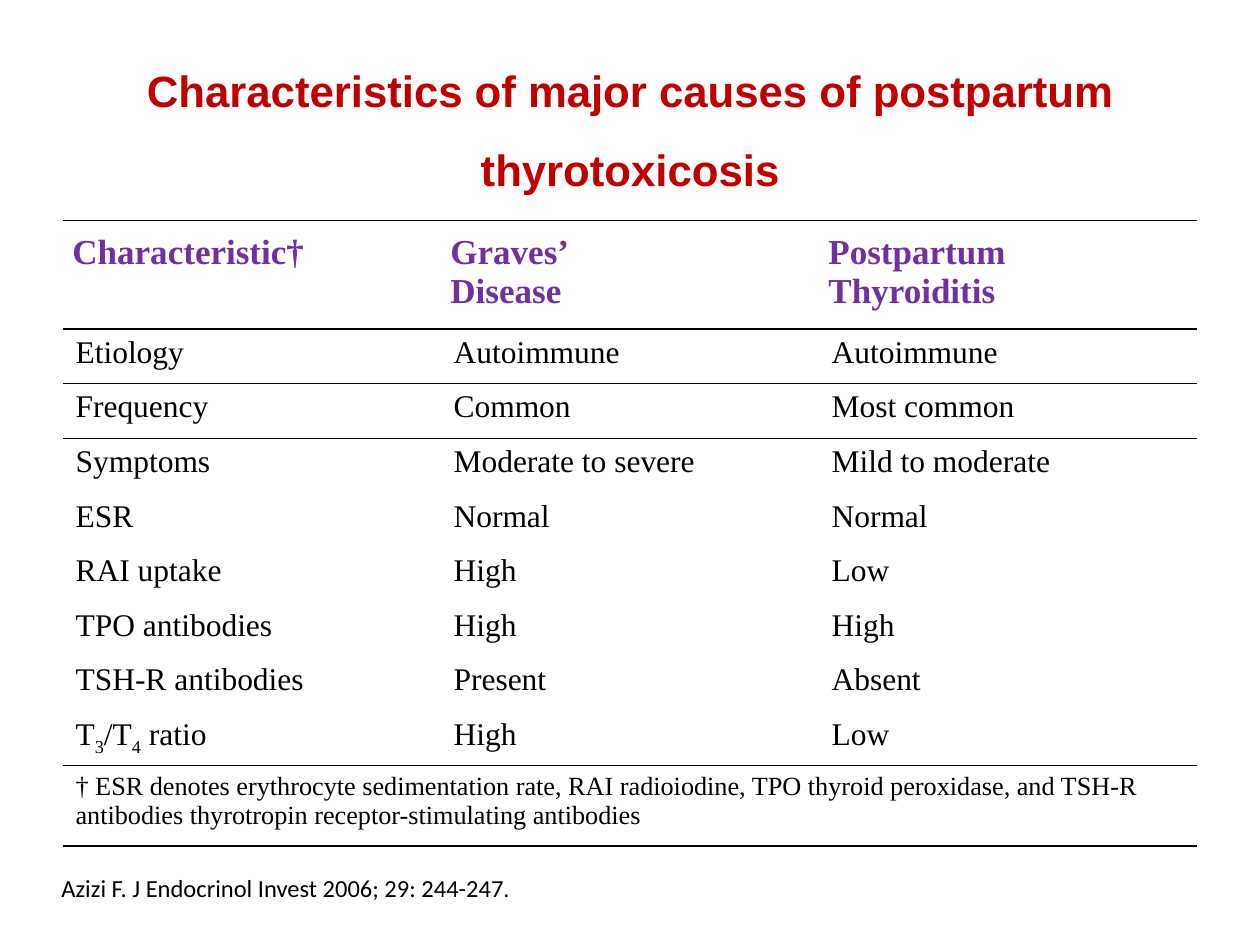
from dataclasses import dataclass

from lxml import etree
from pptx import Presentation
from pptx.dml.color import RGBColor
from pptx.enum import text
from pptx.oxml import ns
from pptx.util import Pt


@dataclass(frozen=True)
class Theme:
    title_color: str = "C00000"
    header_color: str = "7030A0"
    ink: str = "000000"
    title_font: str = "Arial"
    table_font: str = "Times New Roman"
    source_font: str = "Calibri"
    title_size: float = 25
    header_size: float = 20
    body_size: float = 18
    note_size: float = 15
    source_size: float = 14


THEME = Theme()
NO_STYLE_NO_GRID = "{2D5ABB26-0587-4C30-8999-92F81FD0307C}"
TITLE = "Characteristics of major causes of postpartum thyrotoxicosis"
HEADER = ["Characteristic†", "Graves’\nDisease", "Postpartum\nThyroiditis"]
# Text between tildes is set as subscript.
BODY = [
    ["Etiology", "Autoimmune", "Autoimmune"],
    ["Frequency", "Common", "Most common"],
    ["Symptoms", "Moderate to severe", "Mild to moderate"],
    ["ESR", "Normal", "Normal"],
    ["RAI uptake", "High", "Low"],
    ["TPO antibodies", "High", "High"],
    ["TSH-R antibodies", "Present", "Absent"],
    ["T~3~/T~4~ ratio", "High", "Low"],
]
NOTE = ("† ESR denotes erythrocyte sedimentation rate, RAI radioiodine, "
        "TPO thyroid peroxidase, and TSH-R antibodies thyrotropin "
        "receptor-stimulating antibodies")
SOURCE = "Azizi F. J Endocrinol Invest 2006; 29: 244-247."


def place(sp, box):
    sp.left, sp.top, sp.width, sp.height = (Pt(v) for v in box)


def write(tf, content, font, size, color, bold=False):
    """Fill a text frame, one paragraph a line, with ~subscripts~."""
    for i, line in enumerate(content.split("\n")):
        p = tf.add_paragraph() if i else tf.paragraphs[0]
        for j, part in enumerate(line.split("~")):
            r = p.add_run()
            r.text = part
            r.font.name, r.font.size, r.font.bold = font, Pt(size), bold
            r.font.color.rgb = RGBColor.from_string(color)
            if j % 2:
                r.font._element.set("baseline", "-25000")


def add_rule(cell, side, width):
    """Draw a cell border; side is lnT or lnB, added in that order."""
    tcPr = cell._tc.get_or_add_tcPr()
    ln = etree.SubElement(tcPr, ns.qn(f"a:{side}"), w=str(Pt(width)))
    fill = etree.SubElement(ln, ns.qn("a:solidFill"))
    etree.SubElement(fill, ns.qn("a:srgbClr"), val=THEME.ink)


def add_title(s, box):
    sp = s.shapes.title
    place(sp, box)
    tf = sp.text_frame
    tf.word_wrap = True
    tf.auto_size = text.MSO_AUTO_SIZE.NONE
    tf.vertical_anchor = text.MSO_ANCHOR.MIDDLE
    write(tf, TITLE, THEME.title_font, THEME.title_size, THEME.title_color, True)
    p = tf.paragraphs[0]
    p.alignment = text.PP_ALIGN.CENTER
    p.line_spacing = 1.5


def add_comparison_table(s, box, header_height=62, note_height=46):
    rows = [HEADER, *BODY, [NOTE, "", ""]]
    last = len(rows) - 1
    frame = s.shapes.add_table(len(rows), len(HEADER), *(Pt(v) for v in box))
    table = frame.table
    table.first_row = table.horz_banding = False
    table._tbl.tblPr.find(ns.qn("a:tableStyleId")).text = NO_STYLE_NO_GRID

    body_height = (box[3] - header_height - note_height) / len(BODY)
    for row in table.rows:
        row.height = Pt(body_height)
    table.rows[0].height = Pt(header_height)
    table.rows[last].height = Pt(note_height)
    for column in table.columns:
        column.width = Pt(box[2] / len(HEADER))
    table.cell(last, 0).merge(table.cell(last, len(HEADER) - 1))

    rules_above = {0: 1, 1: 1, 2: 0.75, last: 1}
    sizes = {0: THEME.header_size, last: THEME.note_size}
    for i, row in enumerate(rows):
        for j, content in enumerate(row):
            cell = table.cell(i, j)
            if i in rules_above:
                add_rule(cell, "lnT", rules_above[i])
            if i == last or i + 1 in rules_above:
                add_rule(cell, "lnB", rules_above.get(i + 1, 1))
            cell.fill.background()
            if i == 0:
                cell.margin_left = cell.margin_right = Pt(5.4)
                cell.margin_top, cell.margin_bottom = Pt(7.2), Pt(2.7)
            if content:
                write(cell.text_frame, content, THEME.table_font,
                      sizes.get(i, THEME.body_size),
                      THEME.ink if i else THEME.header_color, i == 0)


def add_source(s, box):
    tf = s.shapes.add_textbox(*(Pt(v) for v in box)).text_frame
    tf.word_wrap = False
    tf.auto_size = text.MSO_AUTO_SIZE.SHAPE_TO_FIT_TEXT
    write(tf, SOURCE, THEME.source_font, THEME.source_size, THEME.ink)


def main():
    prs = Presentation()
    prs.slide_width, prs.slide_height = Pt(720), Pt(540)
    s = prs.slides.add_slide(prs.slide_layouts.get_by_name("Title Only"))
    add_title(s, (36, 21.6, 648, 90))
    add_comparison_table(s, (36, 126, 648, 357.6))
    add_source(s, (28, 495.4, 273.6, 24.5))
    prs.save("out.pptx")


if __name__ == "__main__":
    main()
